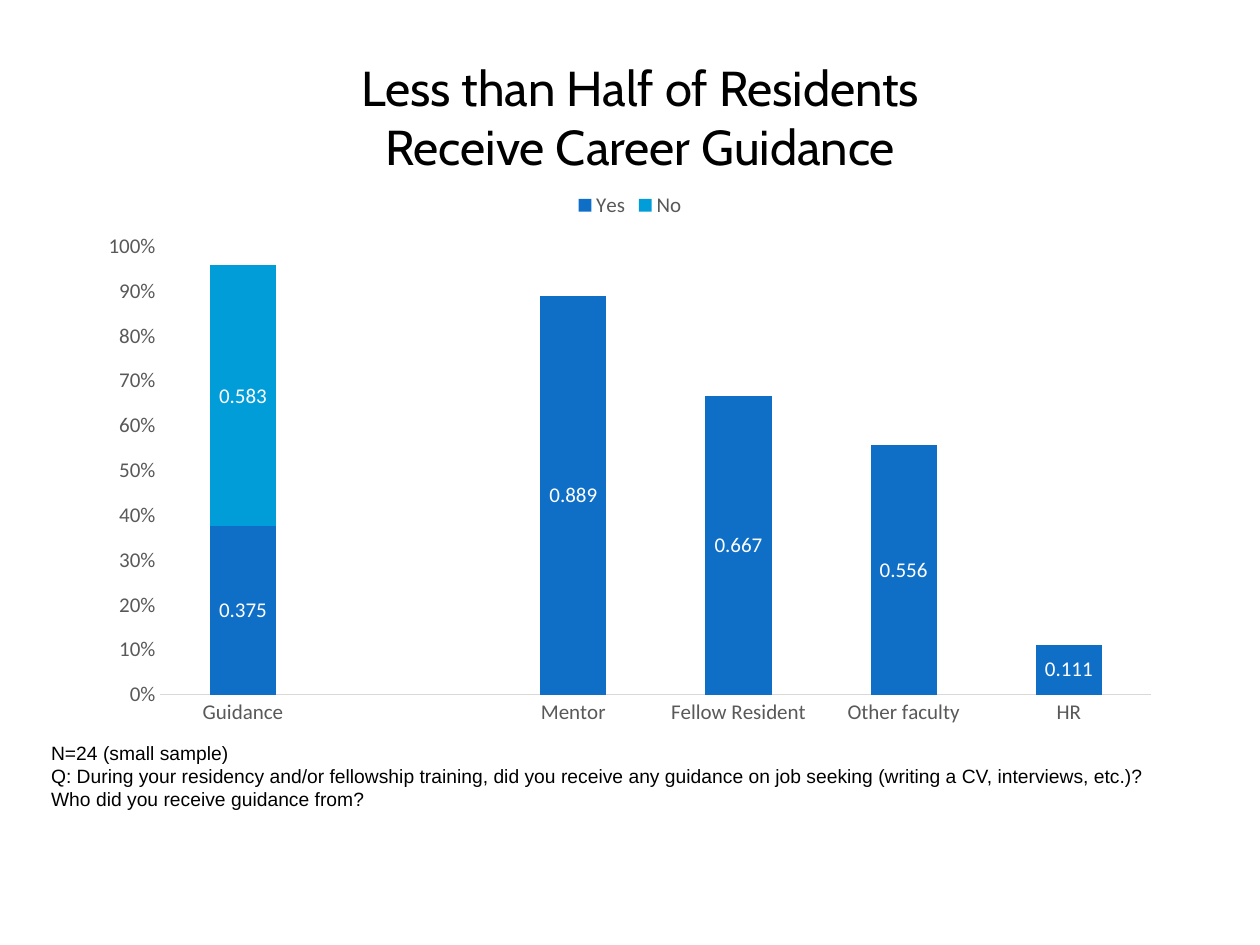
from pptx import Presentation
from pptx.chart.data import CategoryChartData
from pptx.dml.color import RGBColor
from pptx.enum.chart import (XL_CHART_TYPE as ChartType, XL_LABEL_POSITION as LabelPos,
                             XL_LEGEND_POSITION as LegendPos, XL_TICK_MARK as TickMark)
from pptx.enum.text import MSO_ANCHOR as Anchor, MSO_AUTO_SIZE as AutoSize, PP_ALIGN as Align
from pptx.util import Cm, Pt

BLACK, WHITE, GREY, LIGHT_GREY = "000000", "FFFFFF", "595959", "D9D9D9"
SERIES_COLOURS = ("0F6FC6", "009DD9")

CATEGORIES = ("Guidance", "", "Mentor", "Fellow Resident", "Other faculty", "HR")
ANSWERS = {
    "Yes": (0.375, None, 0.889, 0.667, 0.556, 0.111),
    "No": (0.583, None, None, None, None, None),
}


def rgb(colour):
    return RGBColor.from_string(colour)


class SlideBuilder:
    """Holds the fonts and the slide that elements are added to."""

    title_font, chart_font, note_font = "Cabin", "Calibri", "Arial"

    def __init__(self, prs):
        self.s = prs.slides.add_slide(prs.slide_layouts[5])

    def style(self, font, name, size, colour):
        font.name, font.size, font.bold = name, Pt(size), False
        font.color.rgb = rgb(colour)

    def fill_text(self, tf, lines, name, size, align):
        tf.word_wrap = True
        tf.text = "\n".join(lines)
        for p in tf.paragraphs:
            p.alignment = align
            self.style(p.font, name, size, BLACK)

    def title(self, lines, box):
        sp = self.s.shapes.title
        sp.left, sp.top, sp.width, sp.height = (Cm(v) for v in box)
        tf = sp.text_frame
        tf.auto_size, tf.vertical_anchor = AutoSize.NONE, Anchor.MIDDLE
        self.fill_text(tf, lines, self.title_font, 28, Align.CENTER)

    def note(self, lines, box):
        sp = self.s.shapes.add_textbox(*(Cm(v) for v in box))
        self.fill_text(sp.text_frame, lines, self.note_font, 11, Align.LEFT)

    def stacked_columns(self, categories, series, box):
        data = CategoryChartData()
        data.categories = categories
        for name, values in series.items():
            data.add_series(name, values)
        chart = self.s.shapes.add_chart(
            ChartType.COLUMN_STACKED, *(Cm(v) for v in box), data).chart
        self.style(chart.font, self.chart_font, 10, BLACK)
        chart.has_title = False
        chart.has_legend = True
        chart.legend.position = LegendPos.TOP
        chart.legend.include_in_layout = False
        self.style(chart.legend.font, self.chart_font, 12, GREY)
        self.axes(chart)

        plot = chart.plots[0]
        plot.gap_width, plot.overlap = 150, 100
        plot.vary_by_categories = False
        for ser, colour in zip(plot.series, SERIES_COLOURS):
            ser.format.fill.solid()
            ser.format.fill.fore_color.rgb = rgb(colour)
            labels = ser.data_labels
            labels.show_value = True
            labels.position = LabelPos.CENTER
            self.style(labels.font, self.chart_font, 12, WHITE)

    def axes(self, chart):
        for axis in (chart.category_axis, chart.value_axis):
            axis.major_tick_mark = axis.minor_tick_mark = TickMark.NONE
            axis.has_major_gridlines = False
            self.style(axis.tick_labels.font, self.chart_font, 12, GREY)
        line = chart.category_axis.format.line
        line.color.rgb, line.width = rgb(LIGHT_GREY), Pt(0.75)

        value_axis = chart.value_axis
        value_axis.minimum_scale, value_axis.maximum_scale = 0, 1
        value_axis.major_unit = 0.1
        value_axis.tick_labels.number_format = "0%"
        value_axis.tick_labels.number_format_is_linked = False
        value_axis.format.line.fill.background()


def main():
    prs = Presentation()
    prs.slide_width, prs.slide_height = Cm(25.4), Cm(19.05)
    slide = SlideBuilder(prs)
    slide.title(("Less than Half of Residents", "Receive Career Guidance"),
                (0.84, 1.07, 24.13, 2.54))
    slide.stacked_columns(CATEGORIES, ANSWERS, (1.75, 3.6, 21.9, 11.23))
    slide.note(("N=24 (small sample)",
                "Q: During your residency and/or fellowship training, did you receive any "
                "guidance on job seeking (writing a CV, interviews, etc.)? "
                "Who did you receive guidance from?"),
               (0.78, 14.81, 22.89, 1.68))
    prs.save("out.pptx")


if __name__ == "__main__":
    main()
